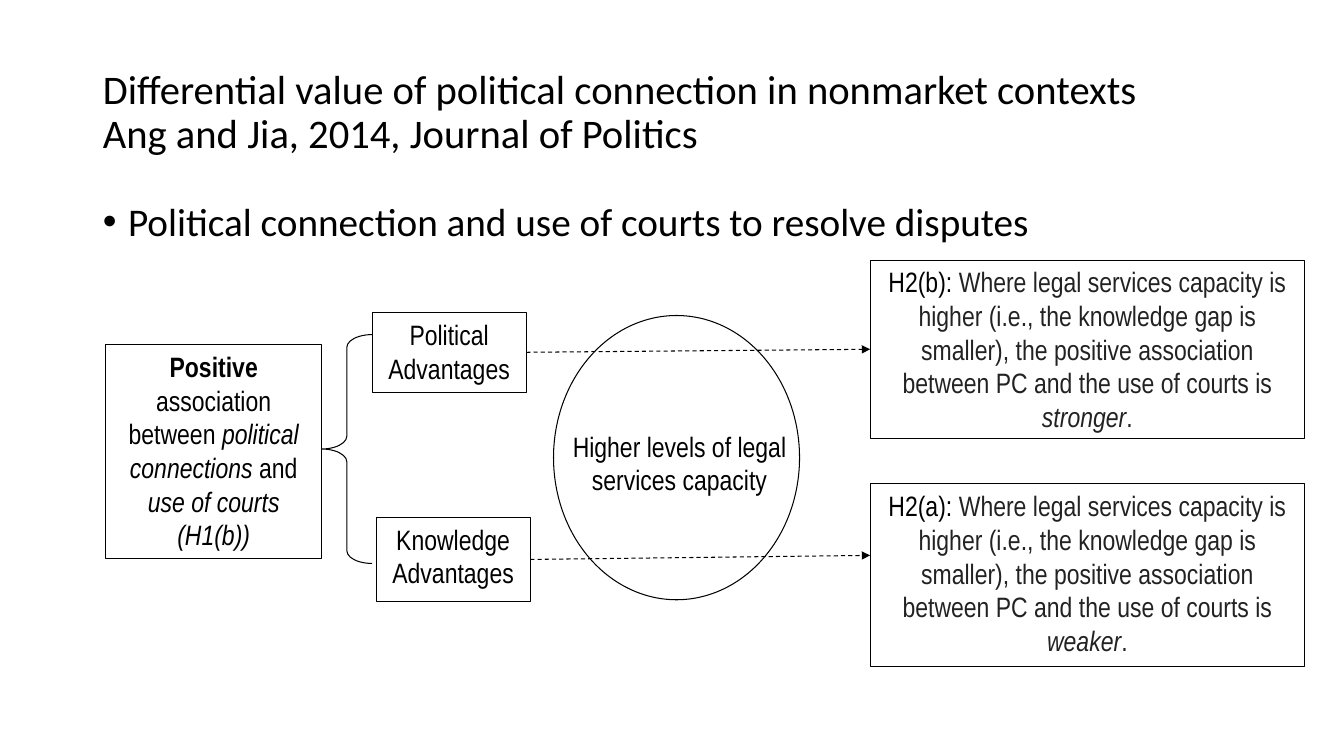
import pptx
import pptx.util
import pptx.dml.color
import pptx.enum.dml
import pptx.enum.shapes
import pptx.enum.text
import pptx.oxml.ns
import lxml.etree
from dataclasses import dataclass

Inches = pptx.util.Inches
Pt = pptx.util.Pt
SHAPE = pptx.enum.shapes.MSO_SHAPE
ALIGN = pptx.enum.text.PP_ALIGN
ANCHOR = pptx.enum.text.MSO_ANCHOR


@dataclass(frozen=True)
class Theme:
    ink: str = "000000"
    soft_ink: str = "222222"
    paper: str = "FFFFFF"
    title_font: str = "Calibri"
    box_font: str = "Arial Narrow"
    title_size: float = 29
    bullet_size: float = 28
    box_size: float = 20
    line_width: float = 0.75


THEME = Theme()

# Content: each span is (text, style), where style may hold b, i or s (soft ink)
TITLE = [("Differential value of political connection in nonmarket contexts\n"
          "Ang and Jia, 2014, Journal of Politics", "")]
BULLET = [("Political connection and use of courts to resolve disputes", "")]
CLAIM = ("Where legal services capacity is higher (i.e., the knowledge gap is smaller), "
         "the positive association between PC and the use of courts is ")


def hypothesis(label, strength):
    return [(label + ": ", ""), (CLAIM, "s"), (strength, "is"), (".", "s")]


# name: (left, top, width, height), outline, spans
BOXES = {
    "association": ((1.05, 3.42, 2.14, 2.12), THEME.ink, [
        ("Positive ", "b"), ("association between ", ""), ("political connections", "i"),
        (" and ", ""), ("use of courts (H1(b))", "i")]),
    "political": ((3.69, 3.1, 1.53, 0.79), THEME.ink, [("Political Advantages", "")]),
    "knowledge": ((3.73, 5.13, 1.53, 0.84), THEME.ink, [("Knowledge Advantages", "")]),
    "capacity": ((5.53, 4.21, 2.42, 1.02), THEME.paper,
                 [("Higher levels of legal services capacity", "")]),
    "stronger": ((8.63, 2.58, 4.31, 1.77), THEME.ink, hypothesis("H2(b)", "stronger")),
    "weaker": ((8.63, 4.8, 4.31, 1.81), THEME.ink, hypothesis("H2(a)", "weaker")),
}
BRACE = (3.19, 3.32, 0.5, 2.27)
CIRCLE = (5.49, 3.13, 2.44, 2.82)
# start box, end point, end box when the arrow meets the middle of its side
ARROWS = [("political", (8.63, 3.47), "stronger"), ("knowledge", (8.63, 5.51), None)]


def color(value):
    return pptx.dml.color.RGBColor.from_string(value)


def write(frame, spans, font=THEME.box_font, size=THEME.box_size, align=ALIGN.CENTER,
          anchor=ANCHOR.TOP, spacing=None, before=0):
    frame.word_wrap = True
    frame.auto_size = pptx.enum.text.MSO_AUTO_SIZE.NONE
    frame.vertical_anchor = anchor
    para = frame.paragraphs[0]
    para.alignment = align
    para.line_spacing = spacing
    para.space_before = Pt(before)
    for text, style in spans:
        for number, line in enumerate(text.split("\n")):
            if number:
                para.add_line_break()
            span = para.add_run()
            span.text = line
            span.font.name = font
            span.font.size = Pt(size)
            span.font.bold = "b" in style
            span.font.italic = "i" in style
            span.font.color.rgb = color(THEME.soft_ink if "s" in style else THEME.ink)
    return para


def place(shape, area):
    shape.left, shape.top, shape.width, shape.height = map(Inches, area)


def outline(shape, value=THEME.ink):
    shape.line.color.rgb = color(value)
    shape.line.width = Pt(THEME.line_width)


def add_shape(page, kind, area, fill=None, line=THEME.ink):
    shape = page.shapes.add_shape(kind, *map(Inches, area))
    shape.shadow.inherit = False
    if fill:
        shape.fill.solid()
        shape.fill.fore_color.rgb = color(fill)
    else:
        shape.fill.background()
    outline(shape, line)
    return shape


def add_arrow(page, start_box, end, end_box):
    start = (start_box.left + start_box.width, start_box.top + start_box.height // 2)
    arrow = page.shapes.add_connector(
        pptx.enum.shapes.MSO_CONNECTOR.STRAIGHT, *start, *map(Inches, end))
    arrow.begin_connect(start_box, 3)
    if end_box is not None:
        arrow.end_connect(end_box, 1)
    outline(arrow)
    arrow.line.dash_style = pptx.enum.dml.MSO_LINE.DASH
    qn = pptx.oxml.ns.qn
    properties = arrow.element.spPr
    lxml.etree.SubElement(properties.find(qn("a:ln")), qn("a:tailEnd"), type="triangle")
    lxml.etree.SubElement(properties, qn("a:effectLst"))


def main():
    deck = pptx.Presentation()
    deck.slide_width, deck.slide_height = Inches(13.33), Inches(7.5)
    page = deck.slides.add_slide(deck.slide_layouts[1])

    # Title and bullet
    title, body = page.shapes.title, page.placeholders[1]
    place(title, (0.92, 0.4, 11.5, 1.45))
    write(title.text_frame, TITLE, font=THEME.title_font, size=THEME.title_size,
          align=ALIGN.LEFT, anchor=ANCHOR.MIDDLE, spacing=0.9)
    place(body, (0.92, 2, 11.5, 0.5))
    bullet = write(body.text_frame, BULLET, font=THEME.title_font, size=THEME.bullet_size,
                   align=ALIGN.LEFT, spacing=0.8, before=10)
    indents = bullet._p.get_or_add_pPr()
    indents.set("marL", str(Inches(0.25)))
    indents.set("indent", str(Inches(-0.25)))

    # Text boxes
    boxes = {}
    for name, (area, line, spans) in BOXES.items():
        boxes[name] = add_shape(page, SHAPE.RECTANGLE, area, fill=THEME.paper, line=line)
        write(boxes[name].text_frame, spans)

    # Brace, arrows and circle
    brace = add_shape(page, SHAPE.LEFT_BRACE, BRACE)
    brace.adjustments[0] = 0.255
    for start, end, target in ARROWS:
        add_arrow(page, boxes[start], end, boxes.get(target))
    add_shape(page, SHAPE.OVAL, CIRCLE)

    deck.save("out.pptx")


if __name__ == "__main__":
    main()
